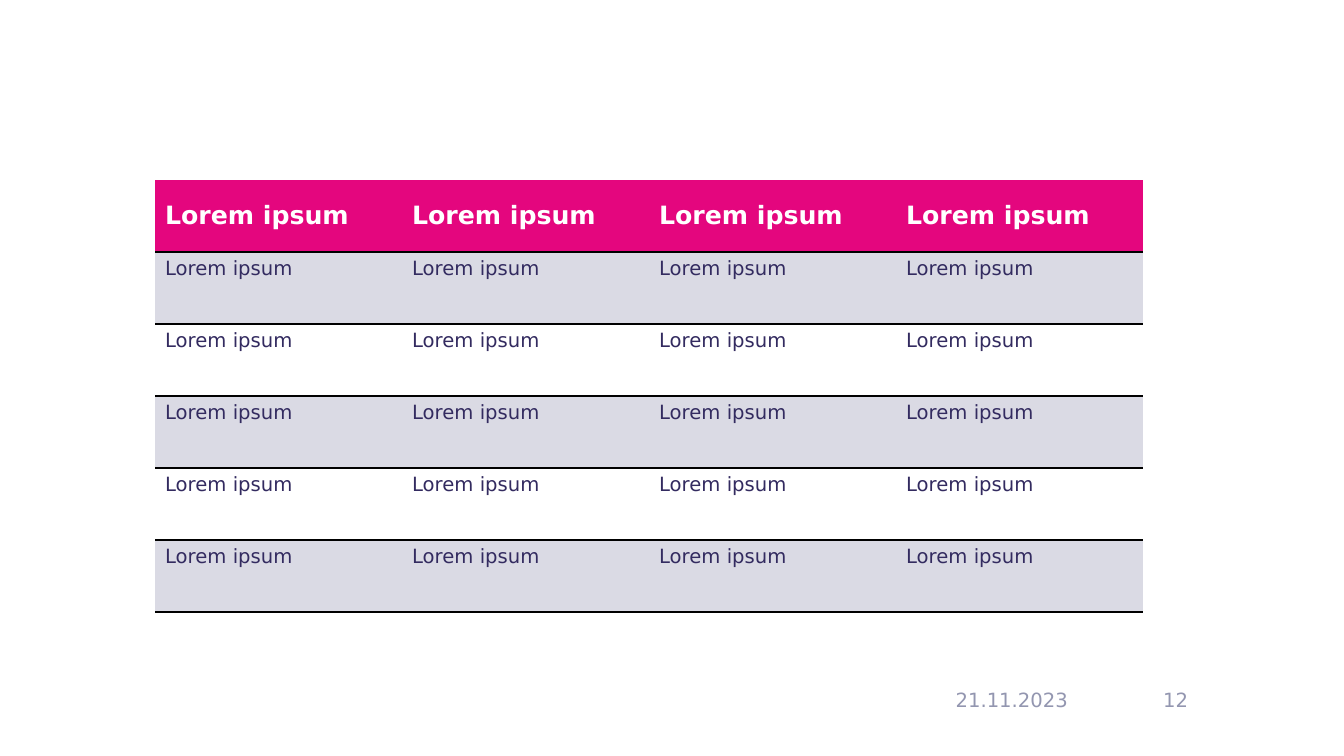
from lxml import etree
from pptx import Presentation
from pptx.dml.color import RGBColor
from pptx.enum.text import MSO_ANCHOR, PP_ALIGN
from pptx.oxml import parse_xml
from pptx.oxml.ns import nsdecls, qn
from pptx.util import Pt

MIDDLE, TOP = MSO_ANCHOR.MIDDLE, MSO_ANCHOR.TOP
LEFT, RIGHT = PP_ALIGN.LEFT, PP_ALIGN.RIGHT
SCALE = 914400 / 100.8
NO_STYLE = "{2D5ABB26-0587-4C30-8999-92F81FD0307C}"
THEME = {
    "font": "DejaVu Sans",
    "pink": "E4067E",
    "band": "DADAE4",
    "white": "FFFFFF",
    "rule": "000000",
    "head": {"size": Pt(18), "bold": True, "color": "FFFFFF"},
    "body": {"size": Pt(14), "bold": False, "color": "332B60"},
    "foot": {"size": Pt(14), "bold": False, "color": "9396B0"},
}


def px(n):
    return round(n * SCALE)


def write(frame, text, style, align):
    para = frame.paragraphs[0]
    para.alignment = align
    run = para.add_run()
    run.text = text
    run.font.name = THEME["font"]
    for key, value in style.items():
        if key == "color":
            run.font.color.rgb = RGBColor.from_string(value)
        else:
            setattr(run.font, key, value)


deck = Presentation()
deck.slide_width, deck.slide_height = px(1344), px(756)
slide = deck.slides.add_slide(deck.slide_layouts[6])

ROWS, COLS, ROW_H, COL_W = 6, 4, 72, 247
table = slide.shapes.add_table(
    ROWS, COLS, px(155), px(180), px(COLS * COL_W), px(ROWS * ROW_H)
).table
table.horz_banding = False
table._tbl.tblPr.find(qn("a:tableStyleId")).text = NO_STYLE
for col in table.columns:
    col.width = px(COL_W)
for i, row in enumerate(table.rows):
    row.height = px(ROW_H)
    fill = THEME["pink" if i == 0 else "band" if i % 2 else "white"]
    for cell in row.cells:
        cell.fill.solid()
        cell.fill.fore_color.rgb = RGBColor.from_string(fill)
        cell.vertical_anchor = TOP if i else MIDDLE
        write(cell.text_frame, "Lorem ipsum", THEME["body" if i else "head"], LEFT)
        line = parse_xml(f'<a:lnB {nsdecls("a")} w="12700"/>')
        paint = etree.SubElement(line, qn("a:solidFill"))
        etree.SubElement(paint, qn("a:srgbClr"), val=THEME["rule"])
        cell._tc.get_or_add_tcPr().insert(0, line)

for text, left, width in (("21.11.2023", 820, 258), ("12", 1111, 87)):
    frame = slide.shapes.add_textbox(px(left), px(680), px(width), px(40)).text_frame
    frame.word_wrap = True
    frame.vertical_anchor = MIDDLE
    write(frame, text, THEME["foot"], RIGHT)

deck.save("out.pptx")
